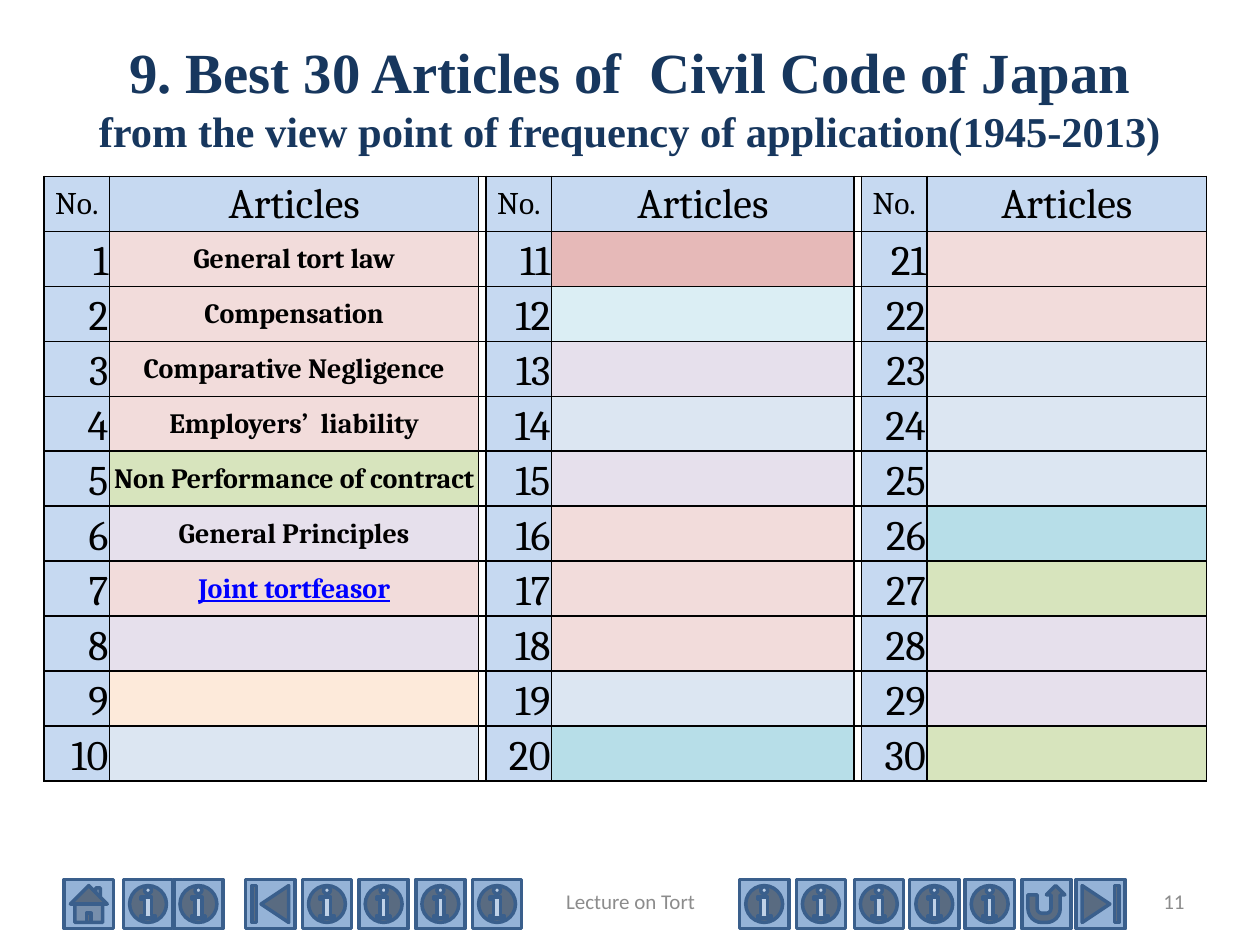
from lxml.etree import SubElement
from pptx import Presentation
from pptx.dml.color import RGBColor
from pptx.enum.shapes import MSO_SHAPE
from pptx.enum.text import MSO_ANCHOR, PP_ALIGN
from pptx.oxml.ns import qn
from pptx.util import Inches, Pt

TITLE = "9. Best 30 Articles of  Civil Code of Japan"
SUB = "from the view point of frequency of application(1945-2013)"
FOOT, PAGE = "Lecture on Tort", "11"
HEAD = ("No.", "Articles")
NAMES = [
    "General tort law", "Compensation", "Comparative Negligence",
    "Employers’  liability", "Non Performance of contract",
    "General Principles", "Joint tortfeasor",
]
LINK = "Joint tortfeasor"
TINTS = [  # one list for each block of ten articles
    "rose rose rose rose green lilac rose lilac peach blue".split(),
    "red aqua lilac blue lilac rose rose rose blue teal".split(),
    "rose rose blue blue blue teal green lilac lilac green".split(),
]
INFO = MSO_SHAPE.ACTION_BUTTON_INFORMATION
BUTTONS = [
    (MSO_SHAPE.ACTION_BUTTON_HOME, [0.51]),
    (MSO_SHAPE.ACTION_BUTTON_BEGINNING, [1.95]),
    (INFO, [0.98, 1.38, 2.4, 2.85, 3.3, 3.75]),
    (INFO, [5.87, 6.32, 6.78, 7.22, 7.66]),
    (MSO_SHAPE.ACTION_BUTTON_RETURN, [8.11]),
    (MSO_SHAPE.ACTION_BUTTON_END, [8.54]),
]

THEME = {
    "ink": "000000", "navy": "17375E", "gray": "8C8C8C", "link": "0000FF",
    "button": "95B3D7", "edge": "3A5F8C", "head": "C6D9F1",
    "rose": "F2DCDB", "red": "E6B9B8", "green": "D7E4BD", "lilac": "E6E0EC",
    "peach": "FDEADA", "blue": "DCE6F2", "aqua": "DBEEF4", "teal": "B7DEE8",
    "title": 32.4, "sub": 24.3, "big": 24, "label": 18, "name": 16, "foot": 12,
    "serif": "Cambria", "roman": "Times New Roman", "sans": "Calibri",
}
WIDE, HIGH = 10, 7.5
LEFT, TOP, TALL = 0.35, 1.4, 4.8
NUM, GAP = 0.52, 0.05
WIDTHS = [2.93, 2.4, 2.22]
ROWS = 11
SIDE, BASE = 0.39, 6.98


def tone(key):
    return RGBColor.from_string(THEME[key])


def put(host, text, size="big", font="serif", color="ink", bold=False,
        line=False, align=PP_ALIGN.CENTER, anchor=MSO_ANCHOR.MIDDLE):
    """Write into a cell or text frame; a second call adds a line below."""
    host.vertical_anchor = anchor
    para = getattr(host, "text_frame", host).paragraphs[0]
    para.alignment = align
    if para.runs:
        para.add_line_break()
    run = para.add_run()
    run.text = text
    face = run.font
    face.size, face.name = Pt(THEME[size]), THEME[font]
    face.bold, face.underline = bold, line
    face.color.rgb = tone(color)


def box(slide, left, top, width, height):
    frame = slide.shapes.add_textbox(*map(Inches, (left, top, width, height))).text_frame
    frame.word_wrap = True
    return frame


def dress(cell, fill=None):
    """Set the insets, borders and fill of a cell."""
    cell.margin_left = cell.margin_right = cell.margin_top = Inches(0.01)
    cell.margin_bottom = 0
    props = cell._tc.get_or_add_tcPr()
    for tag in ("a:lnL", "a:lnR", "a:lnT", "a:lnB"):
        edge = SubElement(props, qn(tag), w=str(Pt(1)))
        paint = SubElement(edge, qn("a:solidFill"))
        SubElement(paint, qn("a:srgbClr"), val=THEME["ink"])
    if fill:
        cell.fill.solid()
        cell.fill.fore_color.rgb = tone(fill)
    else:
        cell.fill.background()


def add_grid(slide):
    cols = []
    for width in WIDTHS:
        cols += [NUM, width, GAP]
    cols.pop()
    grid = slide.shapes.add_table(
        ROWS, len(cols), Inches(LEFT), Inches(TOP), Inches(sum(cols)), Inches(TALL)).table
    grid.first_row = grid.horz_banding = False
    for col, width in zip(grid.columns, cols):
        col.width = Inches(width)
    for row in grid.rows:
        row.height = Inches(TALL / ROWS)

    for block, tints in enumerate(TINTS):
        first = block * 3
        for col, (text, size) in enumerate(zip(HEAD, ("label", "big"))):
            cell = grid.cell(0, first + col)
            dress(cell, "head")
            put(cell, text, size=size)
        for row, tint in enumerate(tints, 1):
            cell = grid.cell(row, first)
            dress(cell, "head")
            put(cell, str(block * 10 + row), align=PP_ALIGN.RIGHT, anchor=MSO_ANCHOR.BOTTOM)
            dress(grid.cell(row, first + 1), tint)
        if block:
            for row in range(ROWS):
                dress(grid.cell(row, first - 1))

    for row, name in enumerate(NAMES, 1):
        link = name == LINK
        put(grid.cell(row, 1), name, size="name", bold=True,
            color="link" if link else "ink", line=link)


def add_buttons(slide):
    for kind, lefts in BUTTONS:
        for left in lefts:
            shape = slide.shapes.add_shape(
                kind, Inches(left), Inches(BASE), Inches(SIDE), Inches(SIDE))
            shape.shadow.inherit = False
            shape.fill.solid()
            shape.fill.fore_color.rgb = tone("button")
            shape.line.color.rgb = tone("edge")
            shape.line.width = Pt(2)


def main():
    deck = Presentation()
    deck.slide_width, deck.slide_height = Inches(WIDE), Inches(HIGH)
    slide = deck.slides.add_slide(deck.slide_layouts[6])
    add_buttons(slide)
    title = box(slide, 0.5, 0.3, 9, 0.93)
    for text, size in ((TITLE, "title"), (SUB, "sub")):
        put(title, text, size=size, font="roman", color="navy", bold=True)
    small = {"size": "foot", "font": "sans", "color": "gray"}
    put(box(slide, 7.17, 6.95, 2.33, 0.4), PAGE, align=PP_ALIGN.RIGHT, **small)
    add_grid(slide)
    put(box(slide, 3.42, 6.95, 3.17, 0.4), FOOT, **small)
    deck.save("out.pptx")


if __name__ == "__main__":
    main()
